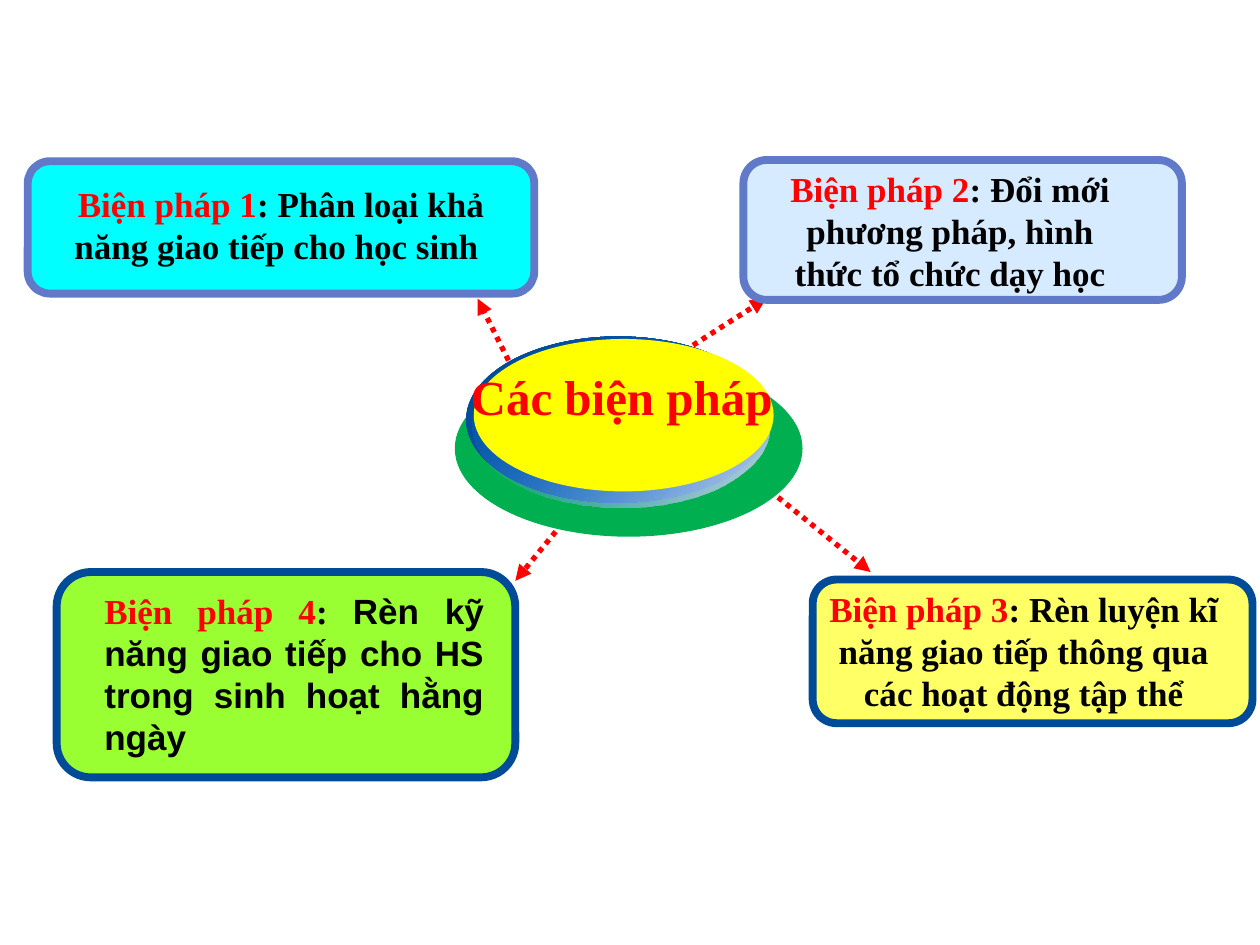
from dataclasses import dataclass

import pptx
import pptx.dml.color
import pptx.enum.dml
import pptx.enum.shapes
import pptx.enum.text
import pptx.oxml.ns
import pptx.util
from lxml import etree

Inches = pptx.util.Inches
Pt = pptx.util.Pt
RGBColor = pptx.dml.color.RGBColor
Shape = pptx.enum.shapes.MSO_SHAPE
Align = pptx.enum.text.PP_ALIGN
qn = pptx.oxml.ns.qn

RED = RGBColor(0xFF, 0x00, 0x00)
BLACK = RGBColor(0x00, 0x00, 0x00)
YELLOW = RGBColor(0xFF, 0xFF, 0x00)
PALE_YELLOW = RGBColor(0xFF, 0xFF, 0x66)
GREEN = RGBColor(0x00, 0xB0, 0x50)
LIME = RGBColor(0x99, 0xFF, 0x33)
CYAN = RGBColor(0x00, 0xFF, 0xFF)
PALE_BLUE = RGBColor(0xD6, 0xEB, 0xFF)
PERIWINKLE = RGBColor(0x60, 0x7A, 0xC9)
NAVY = RGBColor(0x00, 0x4B, 0x97)
DEEP_BLUE = RGBColor(0x00, 0x49, 0x92)
BLUE = RGBColor(0x00, 0x66, 0xCC)
LAVENDER = RGBColor(0xD4, 0xD9, 0xEF)

SERIF = "Times New Roman"
SANS = "Arial"

Area = tuple[float, float, float, float]
Point = tuple[float, float]


@dataclass
class Span:
    text: str
    color: RGBColor = BLACK
    font: str = SERIF
    size: int = 20


@dataclass
class Measure:
    """One outer panel, its text and the arrow that leads to it."""
    panel: Area
    fill: RGBColor
    border: RGBColor
    text_area: Area
    spans: list[Span]
    arrow_from: Point
    arrow_to: Point
    align: Align = Align.CENTER


@dataclass
class Disc:
    """One ellipse of the hub; two colours make a gradient."""
    area: Area
    colors: list[RGBColor]
    fades_in: bool = False


MEASURES = [
    Measure((0.22, 1.28, 4.02, 1.05), CYAN, PERIWINKLE, (0.3, 1.4, 3.79, 0.77),
            [Span(" Biện pháp 1", RED),
             Span(": Phân loại khả năng giao tiếp cho học sinh")],
            (4.11, 3.01), (3.79, 2.37)),
    Measure((5.9, 1.27, 3.48, 1.11), PALE_BLUE, PERIWINKLE, (6.08, 1.28, 2.92, 1.11),
            [Span("Biện pháp 2", RED),
             Span(": Đổi mới phương pháp, hình thức tổ chức dạy học")],
            (5.5, 2.74), (6.08, 2.37)),
    Measure((6.45, 4.6, 3.49, 1.14), PALE_YELLOW, NAVY, (6.46, 4.61, 3.33, 1.11),
            [Span("Biện pháp 3", RED),
             Span(": Rèn luyện kĩ năng giao tiếp thông qua các hoạt động tập thể")],
            (5.98, 3.79), (6.91, 4.54)),
    Measure((0.45, 4.54, 3.64, 1.63), LIME, NAVY, (0.73, 4.63, 3.21, 1.45),
            [Span("Biện pháp 4", RED), Span(": "),
             Span("Rèn kỹ năng giao tiếp cho HS trong sinh hoạt hằng ngày", font=SANS)],
            (4.41, 4.22), (4.09, 4.61), Align.JUSTIFY),
]

DISCS = [
    Disc((3.61, 2.86, 2.76, 1.4), [GREEN]),
    Disc((3.7, 2.67, 2.41, 1.32), [DEEP_BLUE, BLUE]),
    Disc((3.75, 2.74, 2.36, 1.29), [BLUE, LAVENDER], fades_in=True),
    Disc((3.76, 2.69, 2.38, 1.21), [YELLOW]),
]


def add_arrow(page, start: Point, end: Point) -> None:
    arrow = page.shapes.add_connector(
        pptx.enum.shapes.MSO_CONNECTOR.STRAIGHT,
        *(Inches(value) for value in start + end))
    arrow.line.color.rgb = RED
    arrow.line.width = Pt(3)
    arrow.line.dash_style = pptx.enum.dml.MSO_LINE.ROUND_DOT
    properties = arrow._element.spPr
    etree.SubElement(properties.find(qn("a:ln")), qn("a:tailEnd"), type="triangle")
    etree.SubElement(properties, qn("a:effectLst"))


def add_plain_shape(page, kind: Shape, area: Area):
    shape = page.shapes.add_shape(kind, *(Inches(value) for value in area))
    shape.shadow.inherit = False
    return shape


def add_panel(page, measure: Measure) -> None:
    panel = add_plain_shape(page, Shape.ROUNDED_RECTANGLE, measure.panel)
    panel.fill.solid()
    panel.fill.fore_color.rgb = measure.fill
    panel.line.color.rgb = measure.border
    panel.line.width = Pt(4.5)


def add_disc(page, disc: Disc) -> None:
    ellipse = add_plain_shape(page, Shape.OVAL, disc.area)
    ellipse.line.fill.background()
    if len(disc.colors) == 1:
        ellipse.fill.solid()
        ellipse.fill.fore_color.rgb = disc.colors[0]
        return
    ellipse.fill.gradient()
    ellipse.fill.gradient_angle = 315
    for stop, color in zip(ellipse.fill.gradient_stops, disc.colors):
        stop.color.rgb = color
    if disc.fades_in:
        first_color = next(ellipse._element.spPr.iter(qn("a:srgbClr")))
        etree.SubElement(first_color, qn("a:alpha"), val="0")


def add_text(page, area: Area, spans: list[Span], align: Align, wrap: bool = True) -> None:
    box = page.shapes.add_textbox(*(Inches(value) for value in area))
    box.text_frame.word_wrap = wrap
    para = box.text_frame.paragraphs[0]
    para.alignment = align
    for span in spans:
        run = para.add_run()
        run.text = span.text
        formats = {"name": span.font, "size": Pt(span.size), "bold": True}
        for key, value in formats.items():
            setattr(run.font, key, value)
        run.font.color.rgb = span.color


def main() -> None:
    deck = pptx.Presentation()
    deck.slide_width, deck.slide_height = Inches(10), Inches(7.5)
    page = deck.slides.add_slide(deck.slide_layouts[6])
    for measure in MEASURES:
        add_arrow(page, measure.arrow_from, measure.arrow_to)
        add_panel(page, measure)
        add_text(page, measure.text_area, measure.spans, measure.align)
    for disc in DISCS:
        add_disc(page, disc)
    add_text(page, (3.54, 2.86, 2.69, 0.57),
             [Span(" Các biện pháp", RED, size=28)], Align.CENTER, wrap=False)
    deck.save("out.pptx")


if __name__ == "__main__":
    main()
